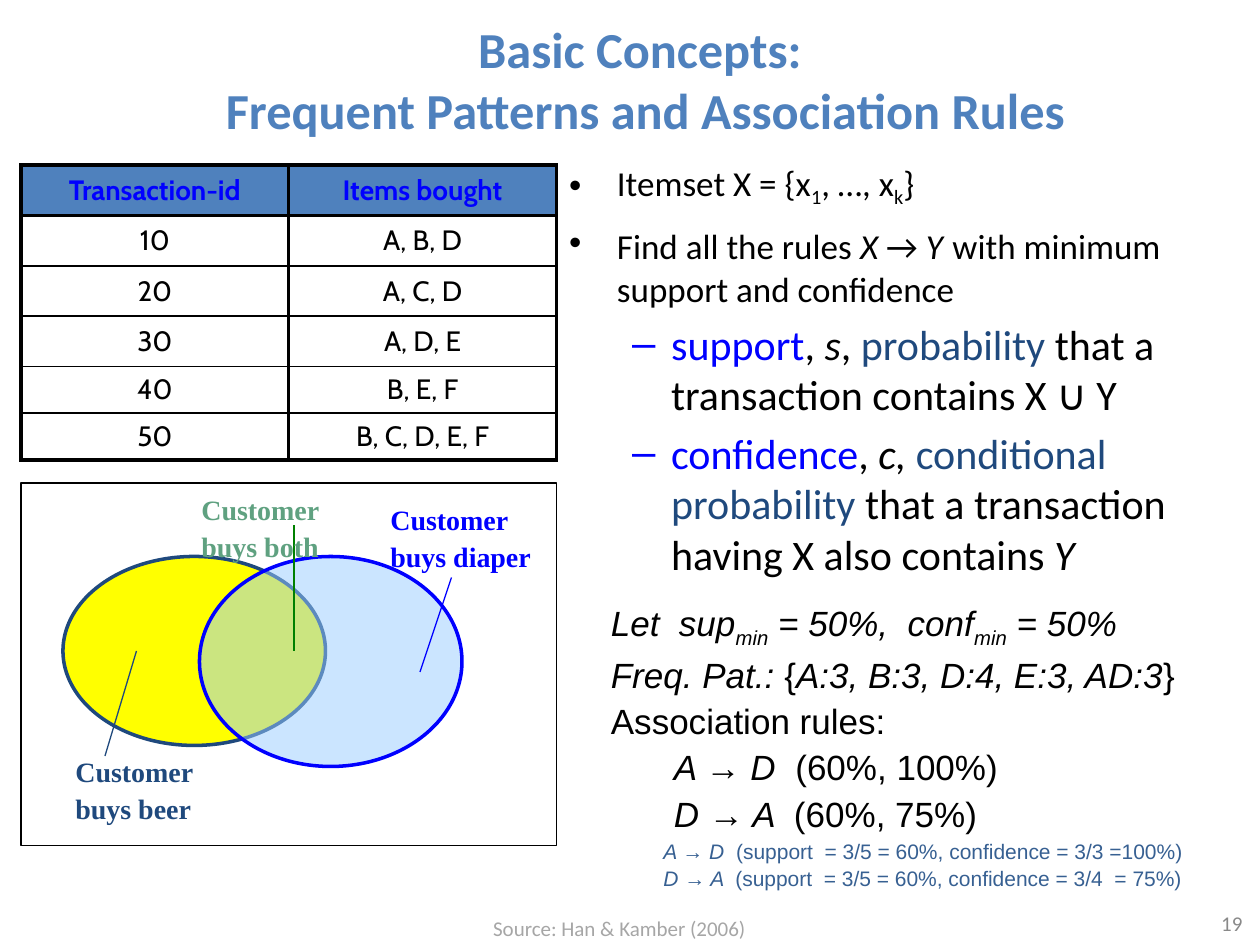
from lxml.etree import SubElement
from pptx import Presentation
from pptx.dml.color import RGBColor
from pptx.enum.shapes import MSO_CONNECTOR as CONN, MSO_SHAPE as SHAPE
from pptx.enum.text import MSO_ANCHOR as ANCHOR, MSO_AUTO_SIZE as FIT, PP_ALIGN as ALIGN
from pptx.oxml.ns import qn
from pptx.util import Inches, Pt

BLACK = RGBColor(0x00, 0x00, 0x00)
BLUE = RGBColor(0x00, 0x00, 0xFF)
NAVY = RGBColor(0x1F, 0x49, 0x7D)
STEEL = RGBColor(0x4F, 0x81, 0xBD)
DEEP = RGBColor(0x37, 0x60, 0x92)
YELLOW = RGBColor(0xFF, 0xFF, 0x00)
SKY = RGBColor(0x99, 0xCC, 0xFF)
GREEN = RGBColor(0x00, 0x80, 0x00)
SAGE = RGBColor(0x5F, 0xA1, 0x80)
GRAY = RGBColor(0x89, 0x89, 0x89)
SILVER = RGBColor(0xA6, 0xA6, 0xA6)

prs = Presentation()
prs.slide_width, prs.slide_height = Inches(10), Inches(7.5)
U = prs.slide_width // 120
s = prs.slides.add_slide(prs.slide_layouts[1])


def write(p, runs, size, font, color, bold=False):
    for text, style, *tint in runs:
        r = p.add_run()
        r.text = text
        f = r.font
        f.size, f.name, f.bold = Pt(size), font, bold
        f.italic = "i" in style
        f.color.rgb = tint[0] if tint else color
        if "_" in style:
            f._element.set("baseline", "-25000")


def box(shapes, place, paras, size, font, color, bold=False, align=ALIGN.LEFT, spacing=1.0):
    tf = shapes.add_textbox(*[int(v * U) for v in place]).text_frame
    tf.word_wrap = True
    for i, runs in enumerate(paras):
        p = tf.paragraphs[0] if i == 0 else tf.add_paragraph()
        p.alignment, p.line_spacing = align, spacing
        write(p, runs, size, font, color, bold)
    return tf


tf = box(s.shapes, (91.5, 85.5, 28, 4.75), [[("19", "")]], 12, "Calibri", GRAY, align=ALIGN.RIGHT)
tf.vertical_anchor = ANCHOR.MIDDLE

sp = s.shapes.title
sp.left, sp.top, sp.width, sp.height = [int(v * U) for v in (9, 1.5, 105, 12)]
tf = sp.text_frame
tf.auto_size, tf.vertical_anchor = FIT.NONE, ANCHOR.MIDDLE
p = tf.paragraphs[0]
p.alignment = ALIGN.CENTER
write(p, [("Basic Concepts: ", "")], 28.8, "Calibri", STEEL, True)
p.add_line_break()
write(p, [("Frequent Patterns and Association Rules", "")], 28.8, "Calibri", STEEL, True)

bullets = [
    (0, [("Itemset X = {x", ""), ("1", "_"), (", …, x", ""), ("k", "_"), ("}", "")]),
    (0, [("Find all the rules ", ""), ("X ", "i"), ("→ ", ""), ("Y", "i"), (" ", ""),
         ("with minimum support and confidence", "")]),
    (1, [("support", "", BLUE), (", ", ""), ("s", "i"), (", ", ""), ("probability", "", NAVY),
         (" that a transaction contains X ∪ Y", "")]),
    (1, [("confidence", "", BLUE), (", ", ""), ("c, ", "i"), ("conditional probability", "", NAVY),
         (" that a transaction having X also contains ", ""), ("Y", "i")]),
]
sp = s.placeholders[1]
sp.left, sp.top, sp.width, sp.height = [int(v * U) for v in (53, 14.75, 65, 42)]
tf = sp.text_frame
tf.auto_size = FIT.NONE
for i, (level, runs) in enumerate(bullets):
    p = tf.paragraphs[0] if i == 0 else tf.add_paragraph()
    p.level = level
    write(p, runs, (20, 24)[level], "Calibri", BLACK)
    pPr = p._p.get_or_add_pPr()
    pPr.set("marL", str(Inches((0.38, 0.81)[level])))
    pPr.set("indent", str(Inches((-0.38, -0.31)[level])))
    SubElement(pPr, qn("a:buChar")).set("char", "•–"[level])
tf.paragraphs[1].runs[4].font.size = Pt(24)

pairs = [("A ", " D  "), ("D ", " A  ")]
rules = [[(a, "i"), ("→", ""), (b, "i")] for a, b in pairs]
results = [
    [("Let  sup", "i"), ("min", "i_"), (" = 50%,  conf", "i"), ("min", "i_"), (" = 50%", "i")],
    [("Freq. Pat.: ", "i"), ("{", ""), ("A:3, B:3, D:4, E:3, AD:3", "i"), ("}", "")],
    [("Association rules:", "")],
    rules[0] + [("(60%, 100%)", "")],
    rules[1] + [("(60%, 75%)", "")],
]
tf = box(s.shapes, (57, 56.25, 60, 22), results, 20, "Arial", BLACK, spacing=1.1)
for p in tf.paragraphs[3:]:
    p.level = 1
    p._p.get_or_add_pPr().set("marL", str(6 * U))

venn = s.shapes.add_group_shape().shapes
outlines = [
    (SHAPE.OVAL, (6, 53, 25, 18), YELLOW, NAVY, 2),
    (SHAPE.OVAL, (19, 53, 25, 20), SKY, BLUE, 2),
    (SHAPE.RECTANGLE, (2, 46, 51, 34.5), None, BLACK, 0.75),
]
for kind, place, fill, line, width in outlines:
    sp = venn.add_shape(kind, *[int(v * U) for v in place])
    sp.shadow.inherit = False
    sp.line.color.rgb, sp.line.width = line, Pt(width)
    if fill is None:
        sp.fill.background()
        continue
    sp.fill.solid()
    sp.fill.fore_color.rgb = fill
    if fill == SKY:
        clr = sp._element.spPr.find(qn("a:solidFill"))[0]
        SubElement(clr, qn("a:alpha")).set("val", "50000")

pointers = [((13, 62, 10, 72), NAVY), ((40, 64, 43, 55), BLUE), ((28, 62, 28, 50), GREEN)]
for ends, color in pointers:
    c = venn.add_connector(CONN.STRAIGHT, *[v * U for v in ends])
    c.line.color.rgb, c.line.width = color, Pt(0.75)
    SubElement(c._element.spPr, qn("a:effectLst"))

labels = [("buys diaper", (36, 47, 16, 8.25), BLUE), ("buys both", (18, 46, 14, 8.25), SAGE),
          ("buys beer", (6, 71, 14, 8.25), NAVY)]
for what, place, color in labels:
    box(venn, place, [[("Customer", "")], [(what, "")]], 16, "Times New Roman", color, True, spacing=1.1)

rows = [("Transaction-id", "Items bought"), ("10", "A, B, D"), ("20", "A, C, D"),
        ("30", "A, D, E"), ("40", "B, E, F"), ("50", "B, C, D, E, F")]
table = s.shapes.add_table(6, 2, 2 * U, Inches(1.31), 51 * U, 28 * U).table
for i, row in enumerate(rows):
    table.rows[i].height = Inches(0.4 if i < 4 else 0.37)
    for j, text in enumerate(row):
        cell = table.cell(i, j)
        cell.vertical_anchor = ANCHOR.MIDDLE
        p = cell.text_frame.paragraphs[0]
        p.alignment = ALIGN.CENTER
        write(p, [(text, "")], 16, "Cabin", BLUE if i == 0 else BLACK, i == 0)
        top, bottom = [2.25 if edge in (0, 1, 6) else 1 for edge in (i, i + 1)]
        tcPr = cell._tc.get_or_add_tcPr()
        for side, width in zip("LRTB", (2.25, 2.25, top, bottom)):
            ln = SubElement(tcPr, qn("a:ln" + side), w=str(Pt(width)))
            SubElement(SubElement(ln, qn("a:solidFill")), qn("a:srgbClr")).set("val", str(BLACK))
        if i == 0:
            cell.fill.solid()
            cell.fill.fore_color.rgb = STEEL
        else:
            cell.fill.background()

details = [rules[0] + [("(support  = 3/5 = 60%, confidence = 3/3 =100%)", "")],
           rules[1] + [("(support  = 3/5 = 60%, confidence = 3/4  = 75%)", "")]]
box(s.shapes, (62, 79, 56, 6.25), details, 12, "Arial", DEEP, spacing=1.1)
box(s.shapes, (44, 86.6, 30, 3.6), [[("Source: Han & Kamber (2006)", "")]], 12, "Calibri", SILVER,
    align=ALIGN.CENTER)

prs.save("out.pptx")
